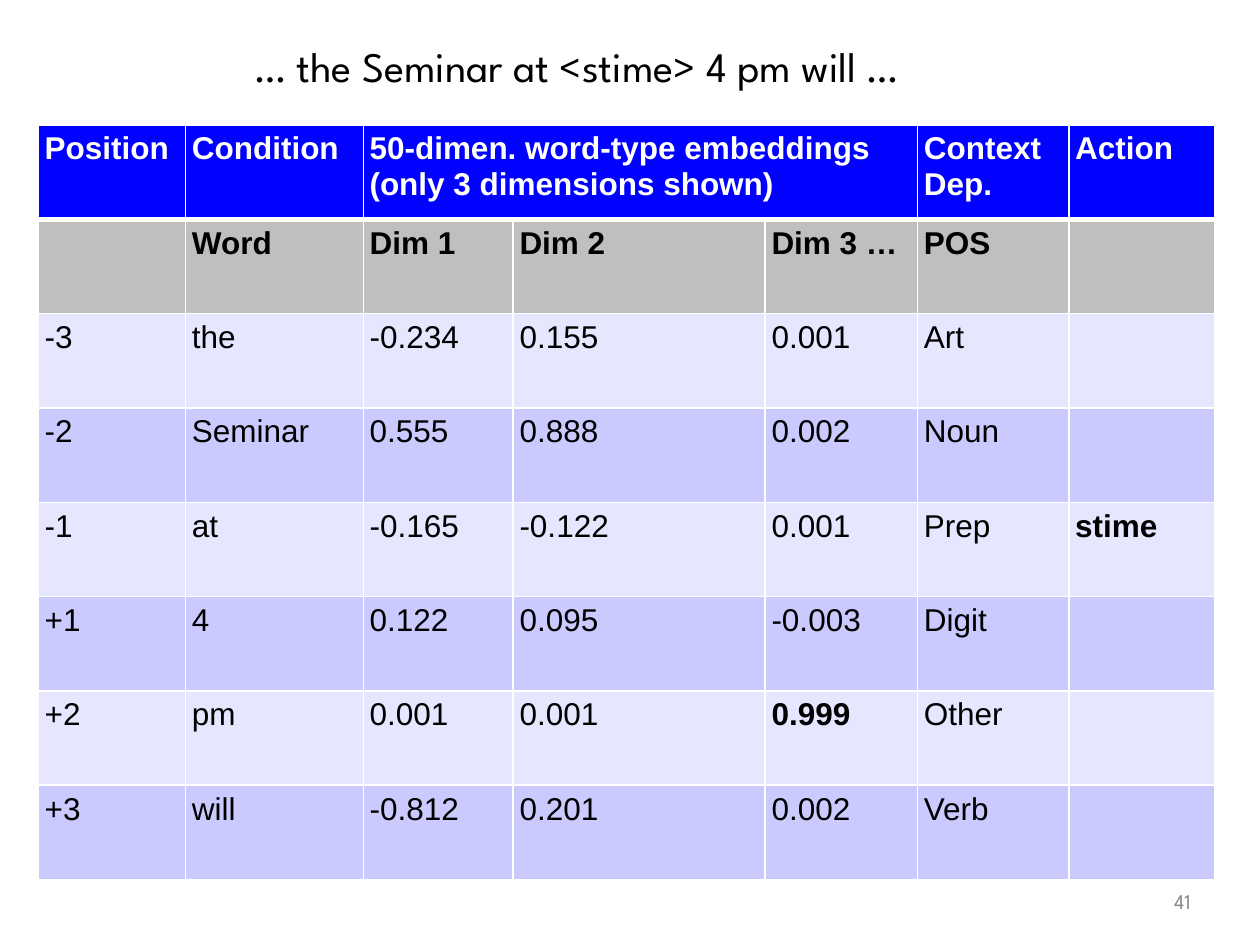
import pptx
import pptx.dml.color
import pptx.enum.text
import pptx.oxml
import pptx.oxml.ns
import pptx.util

Pt = pptx.util.Pt
RGBColor = pptx.dml.color.RGBColor

BLACK = RGBColor(0x00, 0x00, 0x00)
WHITE = RGBColor(0xFF, 0xFF, 0xFF)
GREY = RGBColor(0x88, 0x88, 0x88)
HEADER_BLUE = RGBColor(0x00, 0x01, 0xFF)
SUBHEADER_GREY = RGBColor(0xBF, 0xBF, 0xBF)
BANDS = (RGBColor(0xE6, 0xE6, 0xFF), RGBColor(0xCA, 0xCA, 0xFF))

INSET = Pt(3.6)
MARGINS = {f"margin_{side}": INSET for side in ("left", "top", "right", "bottom")}
CELL_FONT = {"name": "Arial", "size": Pt(18)}
SENTENCE_FONT = {"name": "League Spartan", "size": Pt(24)}
NUMBER_FONT = {"name": "League Spartan", "size": Pt(12)}

COLUMN_WIDTHS = (84.2, 101.5, 85.7, 144, 87.1, 86.4, 83.5)
ROW_HEIGHT = 53.9
ROWS = (
    ("Position", "Condition",
     "50-dimen. word-type embeddings (only 3 dimensions shown)", "", "",
     "Context Dep.", "Action"),
    ("", "Word", "Dim 1", "Dim 2", "Dim 3 …", "POS", ""),
    ("-3", "the", "-0.234", "0.155", "0.001", "Art", ""),
    ("-2", "Seminar", "0.555", "0.888", "0.002", "Noun", ""),
    ("-1", "at", "-0.165", "-0.122", "0.001", "Prep", "stime"),
    ("+1", "4", "0.122", "0.095", "-0.003", "Digit", ""),
    ("+2", "pm", "0.001", "0.001", "0.999", "Other", ""),
    ("+3", "will", "-0.812", "0.201", "0.002", "Verb", ""),
)
EMPHASIZED = ("stime", "0.999")


def apply_format(target, values):
    for name, value in values.items():
        setattr(target, name, value)


def write(frame, text, font, color):
    run = frame.paragraphs[0].add_run()
    run.text = text
    apply_format(run.font, font)
    run.font.color.rgb = color


def add_label(slide, box, text, font, color, frame_format):
    frame = slide.shapes.add_textbox(*map(Pt, box)).text_frame
    apply_format(frame, {**MARGINS, **frame_format})
    write(frame, text, font, color)
    return frame


def add_borders(cell, bottom_width):
    properties = cell._tc.get_or_add_tcPr()
    widths = {"lnL": 1, "lnR": 1, "lnT": 1, "lnB": bottom_width}
    for position, (edge, width) in enumerate(widths.items()):
        properties.insert(position, pptx.oxml.parse_xml(
            f'<a:{edge} {pptx.oxml.ns.nsdecls("a")} w="{Pt(width)}">'
            f'<a:solidFill><a:srgbClr val="{WHITE}"/></a:solidFill></a:{edge}>'))


def row_fill(row):
    if row < 2:
        return (HEADER_BLUE, SUBHEADER_GREY)[row]
    return BANDS[row % 2]


def fill_cell(cell, text, row):
    apply_format(cell, MARGINS)
    cell.fill.solid()
    cell.fill.fore_color.rgb = row_fill(row)
    add_borders(cell, 3 if row == 0 else 1)
    if text:
        bold = row < 2 or text in EMPHASIZED
        write(cell.text_frame, text, {**CELL_FONT, "bold": bold},
              WHITE if row == 0 else BLACK)


def add_feature_table(slide):
    features = slide.shapes.add_table(
        len(ROWS), len(COLUMN_WIDTHS), Pt(21.9), Pt(71.5),
        Pt(sum(COLUMN_WIDTHS)), Pt(ROW_HEIGHT * len(ROWS))).table
    for column, width in zip(features.columns, COLUMN_WIDTHS):
        column.width = Pt(width)
    for row in features.rows:
        row.height = Pt(ROW_HEIGHT)
    features.cell(0, 2).merge(features.cell(0, 4))
    for row, texts in enumerate(ROWS):
        for column, text in enumerate(texts):
            fill_cell(features.cell(row, column), text, row)


def main():
    presentation = pptx.Presentation()
    presentation.slide_width = Pt(720)
    presentation.slide_height = Pt(540)
    slide = presentation.slides.add_slide(presentation.slide_layouts[6])

    page_number = add_label(
        slide, (662.4, 504, 21.6, 22.3), "41", NUMBER_FONT, GREY,
        {"word_wrap": False,
         "vertical_anchor": pptx.enum.text.MSO_ANCHOR.MIDDLE,
         "auto_size": pptx.enum.text.MSO_AUTO_SIZE.SHAPE_TO_FIT_TEXT})
    page_number.paragraphs[0].alignment = pptx.enum.text.PP_ALIGN.RIGHT

    add_feature_table(slide)
    add_label(
        slide, (141.8, 19.4, 549.4, 36), "… the Seminar at <stime> 4 pm will …",
        SENTENCE_FONT, BLACK,
        {"word_wrap": True,
         "auto_size": pptx.enum.text.MSO_AUTO_SIZE.SHAPE_TO_FIT_TEXT})
    presentation.save("out.pptx")


if __name__ == "__main__":
    main()
